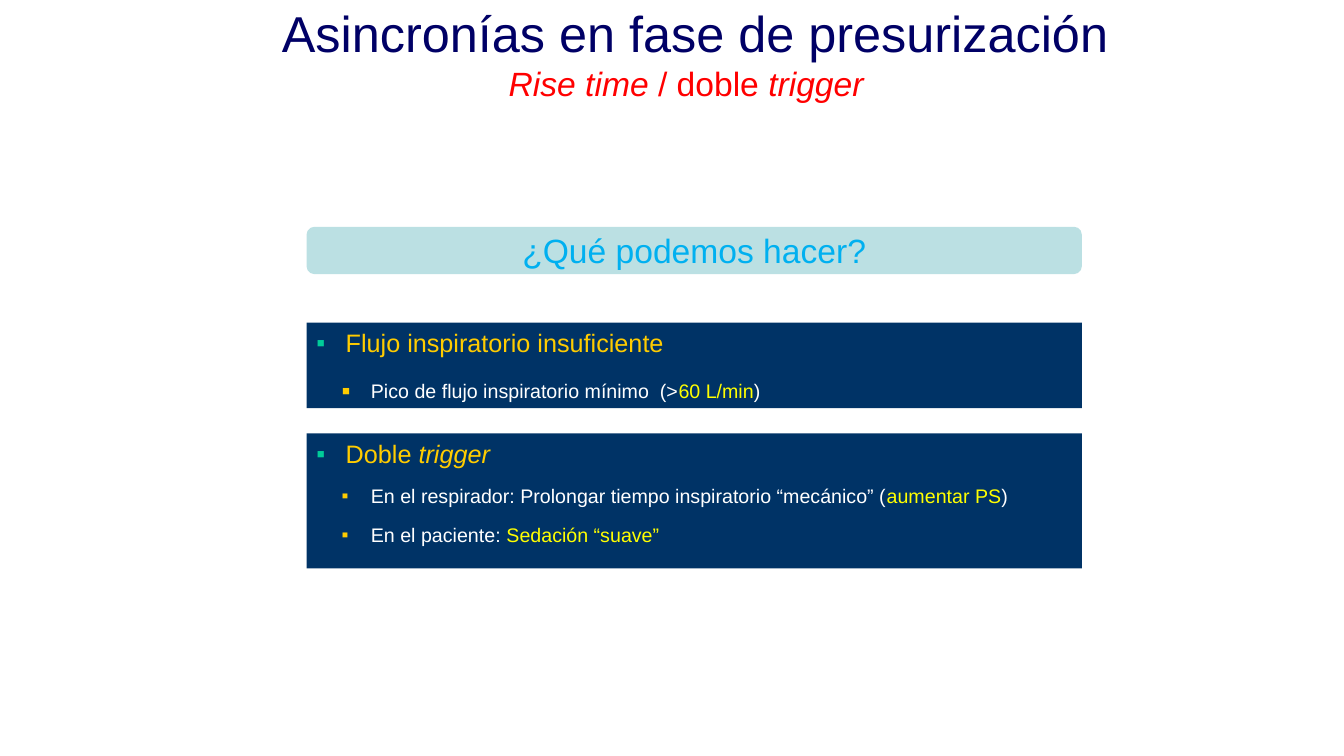
from dataclasses import dataclass

from lxml.etree import SubElement
from pptx import Presentation
from pptx.dml.color import RGBColor
from pptx.enum.shapes import MSO_SHAPE
from pptx.enum.text import MSO_ANCHOR, MSO_AUTO_SIZE, PP_ALIGN
from pptx.oxml.ns import qn
from pptx.util import Inches, Pt

FONT = "Arial"
COLORS = {
    "title": "000066", "subtitle": "FF0000", "banner": "BBE0E3",
    "question": "00B0F0", "panel": "003366", "heading": "FFCC00",
    "body": "FFFFFF", "accent": "FFFF00", "bullet": "00CC99",
}
LEFT, WIDTH = 3.04, 7.69
HANGING = 0.29
LEVEL_STEP = 0.25


@dataclass
class Span:
    text: str
    color: str
    italic: bool = False


@dataclass
class Item:
    spans: list[Span]
    level: int = 0
    before: float = 0
    bullet_pct: int = 100


@dataclass
class Panel:
    top: float
    height: float
    items: list[Item]


PANELS = [
    Panel(3.2, 0.85, [
        Item([Span("Flujo inspiratorio insuficiente", "heading")]),
        Item([Span("Pico de flujo inspiratorio mínimo  (>", "body"),
              Span("60 L/min", "accent"), Span(")", "body")], 1, 15, 129),
    ]),
    Panel(4.3, 1.34, [
        Item([Span("Doble ", "heading"), Span("trigger", "heading", True)]),
        Item([Span("En el respirador: Prolongar tiempo inspiratorio “mecánico” (", "body"),
              Span("aumentar PS", "accent"), Span(")", "body")], 1, 11),
        Item([Span("En el paciente: ", "body"),
              Span("Sedación “suave”", "accent")], 1, 11),
    ]),
]


def rgb(name: str) -> RGBColor:
    return RGBColor.from_string(COLORS[name])


def add_run(p, text: str, *, size: float, color: str, italic: bool = False) -> None:
    r = p.add_run()
    r.text = text
    r.font.name = FONT
    r.font.size = Pt(size)
    r.font.italic = italic
    r.font.color.rgb = rgb(color)


def add_box(slide, kind, top: float, height: float, fill: str):
    sp = slide.shapes.add_shape(kind, Inches(LEFT), Inches(top), Inches(WIDTH), Inches(height))
    sp.shadow.inherit = False
    sp.fill.solid()
    sp.fill.fore_color.rgb = rgb(fill)
    sp.line.fill.background()
    return sp


def set_bullet(p, level: int, color: str, percent: int) -> None:
    """Give the paragraph a square bullet and a hanging indent."""
    pPr = p._p.get_or_add_pPr()
    pPr.set("marL", str(Inches(level * LEVEL_STEP + HANGING)))
    pPr.set("indent", str(Inches(-HANGING)))
    SubElement(SubElement(pPr, qn("a:buClr")), qn("a:srgbClr"), val=COLORS[color])
    SubElement(pPr, qn("a:buSzPct"), val=str(percent * 1000))
    SubElement(pPr, qn("a:buFont"), typeface=FONT)
    SubElement(pPr, qn("a:buChar"), char="▪")


def add_title(slide) -> None:
    sp = slide.shapes.title
    sp.left, sp.top, sp.width, sp.height = (Inches(v) for v in (2.66, -0.03, 8.47, 1.17))
    tf = sp.text_frame
    tf.auto_size = MSO_AUTO_SIZE.NONE
    tf.vertical_anchor = MSO_ANCHOR.TOP
    p = tf.paragraphs[0]
    p.alignment = PP_ALIGN.CENTER
    add_run(p, "Asincronías en fase de presurización", size=36, color="title")
    p = tf.add_paragraph()
    p.alignment = PP_ALIGN.CENTER
    p._p.get_or_add_pPr().set("marR", str(Inches(0.18)))
    for text, italic in (("Rise time ", True), ("/ doble ", False), ("trigger", True)):
        add_run(p, text, size=24, color="subtitle", italic=italic)


def add_banner(slide) -> None:
    sp = add_box(slide, MSO_SHAPE.ROUNDED_RECTANGLE, 2.25, 0.47, "banner")
    tf = sp.text_frame
    tf.word_wrap = False
    tf.vertical_anchor = MSO_ANCHOR.MIDDLE
    p = tf.paragraphs[0]
    p.alignment = PP_ALIGN.CENTER
    add_run(p, "¿Qué podemos hacer?", size=24, color="question")


def add_panel(slide, panel: Panel) -> None:
    sp = add_box(slide, MSO_SHAPE.RECTANGLE, panel.top, panel.height, "panel")
    tf = sp.text_frame
    tf.word_wrap = True
    tf.vertical_anchor = MSO_ANCHOR.TOP
    for i, item in enumerate(panel.items):
        p = tf.add_paragraph() if i else tf.paragraphs[0]
        p.alignment = PP_ALIGN.LEFT
        p.level = item.level
        if item.before:
            p.space_before = Pt(item.before)
        set_bullet(p, item.level, "heading" if item.level else "bullet", item.bullet_pct)
        for span in item.spans:
            add_run(p, span.text, size=14 if item.level else 18,
                    color=span.color, italic=span.italic)


def main() -> None:
    prs = Presentation()
    prs.slide_width, prs.slide_height = Inches(13.33), Inches(7.5)
    slide = prs.slides.add_slide(prs.slide_layouts[5])
    add_title(slide)
    add_banner(slide)
    for panel in PANELS:
        add_panel(slide, panel)
    prs.save("out.pptx")


if __name__ == "__main__":
    main()
